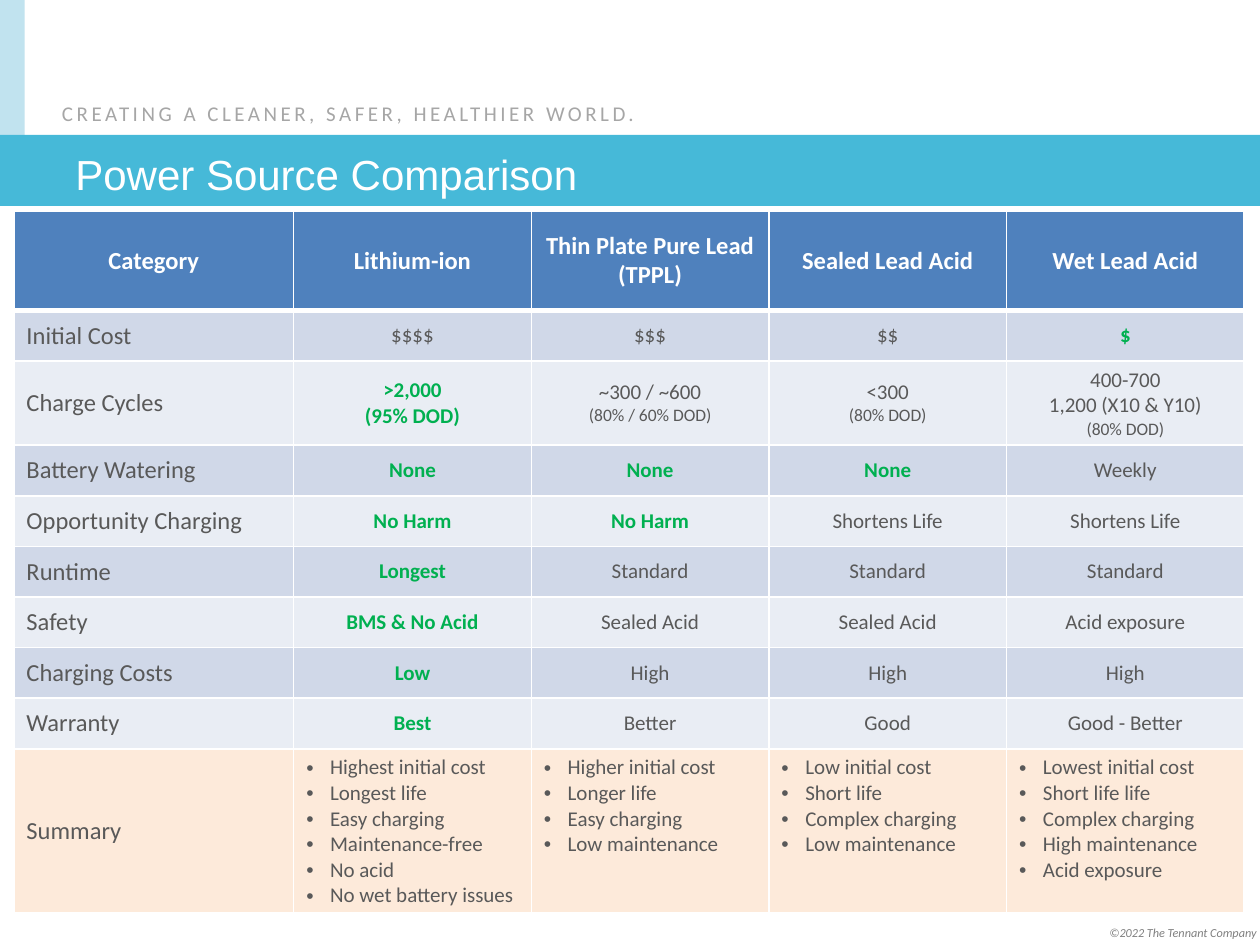
"""Build the power source comparison slide with its battery table."""
from dataclasses import dataclass

from lxml.etree import SubElement
from pptx import Presentation
from pptx.dml.color import RGBColor as RGB
from pptx.enum.shapes import MSO_SHAPE as Kind
from pptx.enum.text import MSO_ANCHOR as Anchor, MSO_AUTO_SIZE as Fit, PP_ALIGN as Align
from pptx.oxml import parse_xml
from pptx.oxml.ns import nsdecls, qn
from pptx.util import Cm, Pt


@dataclass(frozen=True)
class Theme:
    body: str = "Calibri"
    title: str = "Arial"
    white: str = "FFFFFF"
    pale: str = "C1E3EF"
    band: str = "46B9D8"
    head: str = "4F81BD"
    odd: str = "D0D8E8"
    even: str = "E9EDF4"
    sum: str = "FDEADA"
    text: str = "595959"
    best: str = "00B050"
    tag: str = "A6A6A6"
    note: str = "808080"
    big: int = 24
    label: int = 14
    cell: int = 12
    small: int = 10
    tiny: int = 7


def style(par, size, color, face=Theme.body, bold=False):
    font = par.font
    font.size, font.name, font.bold = Pt(size), face, bold
    font.color.rgb = RGB.from_string(color)


def add_text(box, words, size, color, face=Theme.body):
    frame = slide.shapes.add_textbox(*map(Cm, box)).text_frame
    frame.word_wrap = True
    par = frame.paragraphs[0]
    par.text = words
    style(par, size, color, face)
    return frame, par


look = Theme()
deck = Presentation()
deck.slide_width, deck.slide_height = Cm(25.4), Cm(19.05)
slide = deck.slides.add_slide(deck.slide_layouts[6])

for box, color in [((0, 0, 0.5, 3.38), look.pale), ((0, 2.72, 25.4, 1.43), look.band)]:
    bar = slide.shapes.add_shape(Kind.RECTANGLE, *map(Cm, box))
    bar.shadow.inherit = False
    bar.fill.solid()
    bar.fill.fore_color.rgb = RGB.from_string(color)
    bar.line.fill.background()

frame, par = add_text((1, 1.91, 13.9, 0.77), "CREATING A CLEANER, SAFER, HEALTHIER WORLD.",
                      look.cell, look.tag)
frame.auto_size = Fit.SHAPE_TO_FIT_TEXT
par.runs[0].font._element.set("spc", "200")

frame, par = add_text((21.16, 18.52, 4.42, 0.56), "©2022 The Tennant Company",
                      look.tiny, look.note)
frame.auto_size = Fit.SHAPE_TO_FIT_TEXT
par.alignment = Align.RIGHT
par.font.italic = True

frame, par = add_text((1.27, 2.75, 22.86, 1.5), "Power Source Comparison",
                      look.big, look.white, look.title)
frame.vertical_anchor = Anchor.MIDDLE

# A leading asterisk marks the best value of a row.
rows = [
    ["Category", "Lithium-ion", "Thin Plate Pure Lead (TPPL)", "Sealed Lead Acid",
     "Wet Lead Acid"],
    ["Initial Cost", "$$$$", "$$$", "$$", "*$"],
    ["Charge Cycles", "*>2,000\n(95% DOD)", "~300 / ~600\n(80% / 60% DOD)",
     "<300\n(80% DOD)", "400-700\n1,200 (X10 & Y10)\n(80% DOD)"],
    ["Battery Watering", "*None", "*None", "*None", "Weekly"],
    ["Opportunity Charging", "*No Harm", "*No Harm", "Shortens Life", "Shortens Life"],
    ["Runtime", "*Longest", "Standard", "Standard", "Standard"],
    ["Safety", "*BMS & No Acid", "Sealed Acid", "Sealed Acid", "Acid exposure"],
    ["Charging Costs", "*Low", "High", "High", "High"],
    ["Warranty", "*Best", "Better", "Good", "Good - Better"],
    ["Summary",
     "Highest initial cost\nLongest life\nEasy charging\nMaintenance-free\nNo acid\n"
     "No wet battery issues",
     "Higher initial cost\nLonger life\nEasy charging\nLow maintenance",
     "Low initial cost\nShort life\nComplex charging\nLow maintenance",
     "Lowest initial cost\nShort life life\nComplex charging\nHigh maintenance\n"
     "Acid exposure"],
]
last = len(rows) - 1
wide = [5.64] + [4.79] * 4
tall = [2.01, 1.02, 1.42] + [1.02] * 6 + [3.28]
fills = [look.head] + [look.odd, look.even] * 4 + [look.sum]

grid = slide.shapes.add_table(len(rows), len(wide), Cm(0.28), Cm(4.25),
                              Cm(sum(wide)), Cm(sum(tall))).table
for col, width in zip(grid.columns, wide):
    col.width = Cm(width)
for row, height in zip(grid.rows, tall):
    row.height = Cm(height)

for r, row in enumerate(rows):
    for c, words in enumerate(row):
        cell = grid.cell(r, c)
        cell.fill.solid()
        cell.fill.fore_color.rgb = RGB.from_string(fills[r])
        listed = r == last and c > 0
        cell.vertical_anchor = Anchor.TOP if listed else Anchor.MIDDLE

        props = cell._tc.get_or_add_tcPr()
        for i, side in enumerate("LRTB"):
            thick = (r, side) in [(0, "B"), (1, "T")]
            props.insert(i, parse_xml(
                f'<a:ln{side} {nsdecls("a")} w="{Pt(3 if thick else 1)}"><a:solidFill>'
                f'<a:srgbClr val="{look.white}"/></a:solidFill></a:ln{side}>'))

        best = words.startswith("*")
        cell.text = words.removeprefix("*")
        for par in cell.text_frame.paragraphs:
            if listed:
                mark = par._p.get_or_add_pPr()
                mark.set("marL", str(Cm(0.48)))
                mark.set("indent", str(Cm(-0.48)))
                SubElement(mark, qn("a:buFont"), typeface=look.title)
                SubElement(mark, qn("a:buChar"), char="•")
            elif r == 0 or c > 0:
                par.alignment = Align.CENTER
            if r == 0:
                style(par, look.label, look.white, bold=True)
            elif c == 0:
                style(par, look.label, look.text)
            elif best:
                style(par, look.cell, look.best, bold=True)
            else:
                style(par, look.small if par.text.startswith("(") else look.cell, look.text)

deck.save("out.pptx")
